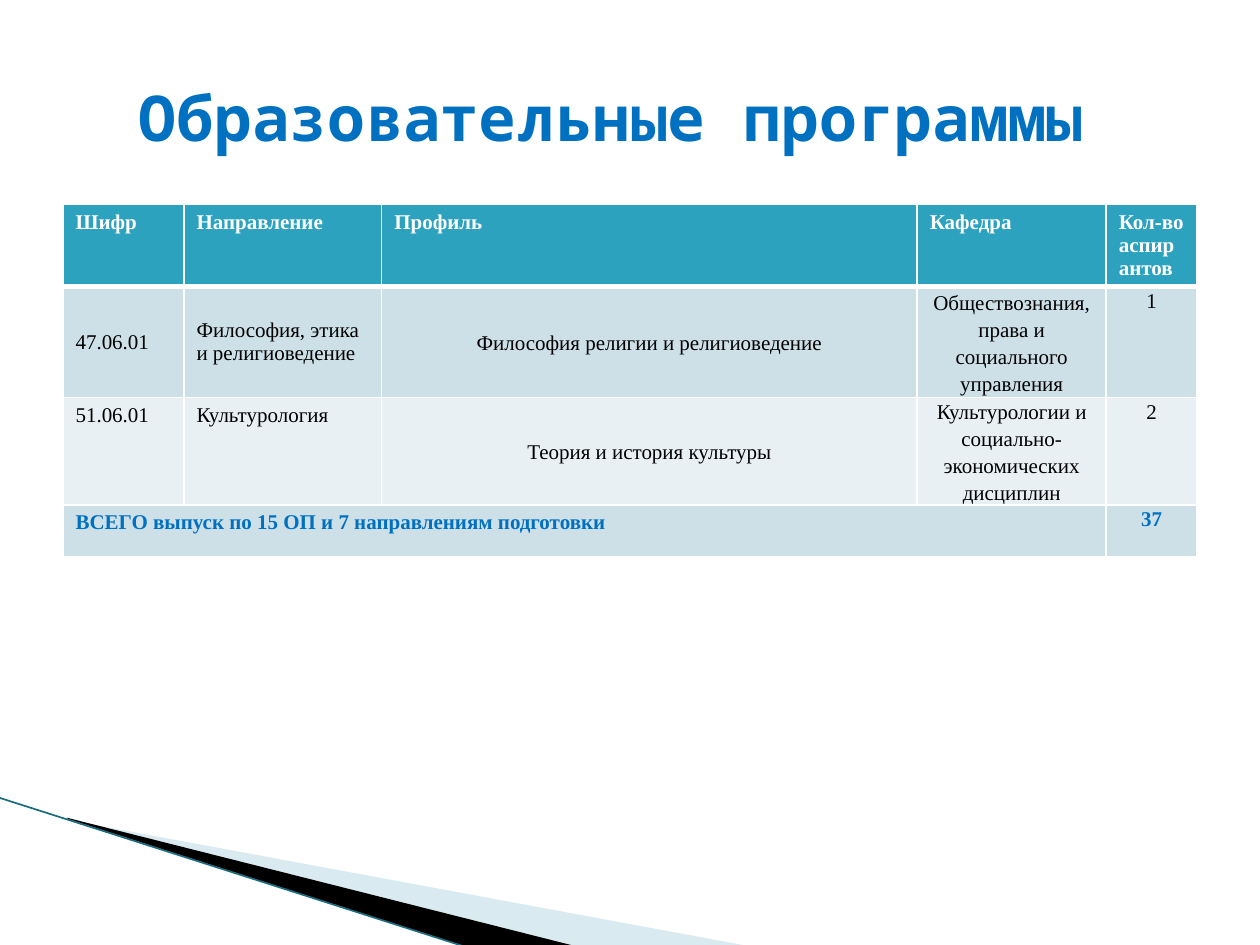
from lxml import etree
from pptx import Presentation
from pptx.dml.color import RGBColor
from pptx.enum.shapes import MSO_CONNECTOR
from pptx.enum.text import MSO_ANCHOR, PP_ALIGN
from pptx.oxml.ns import qn
from pptx.util import Inches, Pt

LEFT, CENTER = PP_ALIGN.LEFT, PP_ALIGN.CENTER
TOP, MIDDLE = MSO_ANCHOR.TOP, MSO_ANCHOR.MIDDLE
STRAIGHT = MSO_CONNECTOR.STRAIGHT

WHITE = RGBColor(0xFF, 0xFF, 0xFF)
BLACK = RGBColor(0x00, 0x00, 0x00)
BLUE = RGBColor(0x00, 0x70, 0xC0)
TEAL = RGBColor(0x2D, 0xA2, 0xBF)
DARK_TEAL = RGBColor(0x1A, 0x6C, 0x80)
PALE_TEAL = RGBColor(0xA0, 0xCB, 0xDC)
BAND_DARK = RGBColor(0xCD, 0xE0, 0xE8)
BAND_LIGHT = RGBColor(0xE8, 0xF0, 0xF4)

TITLE_FONT, TABLE_FONT = "Noto Sans Mono", "Times New Roman"
COL_WIDTHS = [0.96, 1.57, 4.25, 1.5, 0.72]
ROW_HEIGHTS = [0.41, 0.88, 0.41, 0.41]
ROWS = [
    ["Шифр", "Направление", "Профиль", "Кафедра", "Кол-во аспирантов"],
    ["47.06.01", "Философия, этика и религиоведение",
     "Философия религии и религиоведение",
     "Обществознания, права и социального управления", "1"],
    ["51.06.01", "Культурология", "Теория и история культуры",
     "Культурологии и социально-экономических дисциплин", "2"],
    ["ВСЕГО выпуск по 15 ОП и 7 направлениям подготовки", "", "", "", "37"],
]
# Fill, text colour and bold for each row
ROW_STYLES = [(TEAL, WHITE, True), (BAND_DARK, BLACK, False),
              (BAND_LIGHT, BLACK, False), (BAND_DARK, BLUE, True)]
MIDDLE_CELLS = {(1, 0), (1, 1), (1, 2), (1, 3), (2, 2)}


def add_text(p, text, font, size, color, bold):
    r = p.add_run()
    r.text = text
    r.font.name, r.font.size = font, Pt(size)
    r.font.color.rgb, r.font.bold = color, bold


def add_wedge(slide, points, color, opacity=None):
    (x, y), *rest = [(Inches(px), Inches(py)) for px, py in points]
    builder = slide.shapes.build_freeform(x, y)
    builder.add_line_segments(rest, close=True)
    s = builder.convert_to_shape()
    s.shadow.inherit = False
    s.line.fill.background()
    s.fill.solid()
    s.fill.fore_color.rgb = color
    if opacity:
        clr = s.fill._xPr.find(".//" + qn("a:srgbClr"))
        etree.SubElement(clr, qn("a:alpha"), val=str(opacity * 1000))


def add_corner(slide, left, top):
    """Wedges and edge line in the lower left corner."""
    def at(*points):
        return [(left + dx, top + dy) for dx, dy in points]

    add_wedge(slide, at((0.55, 0.18), (5.95, 1.18), (4.56, 1.18), (0.55, 0.17)),
              PALE_TEAL, 40)
    add_wedge(slide, at((0.53, 0.16), (4.57, 1.18), (3.72, 1.19), (0.54, 0.17)), BLACK)
    (x1, y1), (x2, y2) = at((-0.01, 0), (3.71, 1.19))
    line = slide.shapes.add_connector(STRAIGHT, Inches(x1), Inches(y1),
                                      Inches(x2), Inches(y2))
    line.line.color.rgb = DARK_TEAL
    line.line.width = Pt(0.95)
    etree.SubElement(line._element.spPr, qn("a:effectLst"))


def set_borders(cell, bottom, top):
    tc_pr = cell._tc.get_or_add_tcPr()
    for side, width in (("L", 1), ("R", 1), ("T", top), ("B", bottom)):
        ln = etree.SubElement(tc_pr, qn("a:ln" + side), w=str(Pt(width)))
        fill = etree.SubElement(ln, qn("a:solidFill"))
        etree.SubElement(fill, qn("a:srgbClr"), val=str(WHITE))


def add_programs_table(slide, left, top, width, height):
    table = slide.shapes.add_table(len(ROWS), len(COL_WIDTHS), Inches(left), Inches(top),
                                   Inches(width), Inches(height)).table
    for col, w in zip(table.columns, COL_WIDTHS):
        col.width = Inches(w)
    for row, h in zip(table.rows, ROW_HEIGHTS):
        row.height = Inches(h)
    last = len(ROWS) - 1
    table.cell(last, 0).merge(table.cell(last, 3))

    for i, (texts, (fill, color, bold)) in enumerate(zip(ROWS, ROW_STYLES)):
        for j, text in enumerate(texts):
            cell = table.cell(i, j)
            set_borders(cell, bottom=3 if i == 0 else 1, top=3 if i == 1 else 1)
            cell.fill.solid()
            cell.fill.fore_color.rgb = fill
            cell.vertical_anchor = MIDDLE if (i, j) in MIDDLE_CELLS else TOP
            p = cell.text_frame.paragraphs[0]
            p.alignment = LEFT
            # Body values are centred, with tight margins
            if i > 0 and j > 1:
                cell.margin_left = cell.margin_right = Inches(0.07)
                cell.margin_top = cell.margin_bottom = 0
                p.alignment, p.line_spacing = CENTER, 1.15
            if text:
                add_text(p, text, TABLE_FONT, 12, color, bold)


def place_title(slide, left, top, width, height):
    title = slide.shapes.title
    title.left, title.top = Inches(left), Inches(top)
    title.width, title.height = Inches(width), Inches(height)
    tf = title.text_frame
    tf.word_wrap = True
    tf.vertical_anchor = MIDDLE
    p = tf.paragraphs[0]
    p.alignment = CENTER
    add_text(p, "Образовательные программы ", TITLE_FONT, 36, BLUE, True)


def main():
    prs = Presentation()
    prs.slide_width, prs.slide_height = Inches(10), Inches(7.5)
    slide = prs.slides.add_slide(prs.slide_layouts[5])
    slide.background.fill.solid()
    slide.background.fill.fore_color.rgb = WHITE
    add_corner(slide, 0, 6.33)
    add_programs_table(slide, 0.5, 1.62, 9, sum(ROW_HEIGHTS))
    place_title(slide, 0.5, 0.3, 9, 1.25)
    prs.save("out.pptx")


if __name__ == "__main__":
    main()
